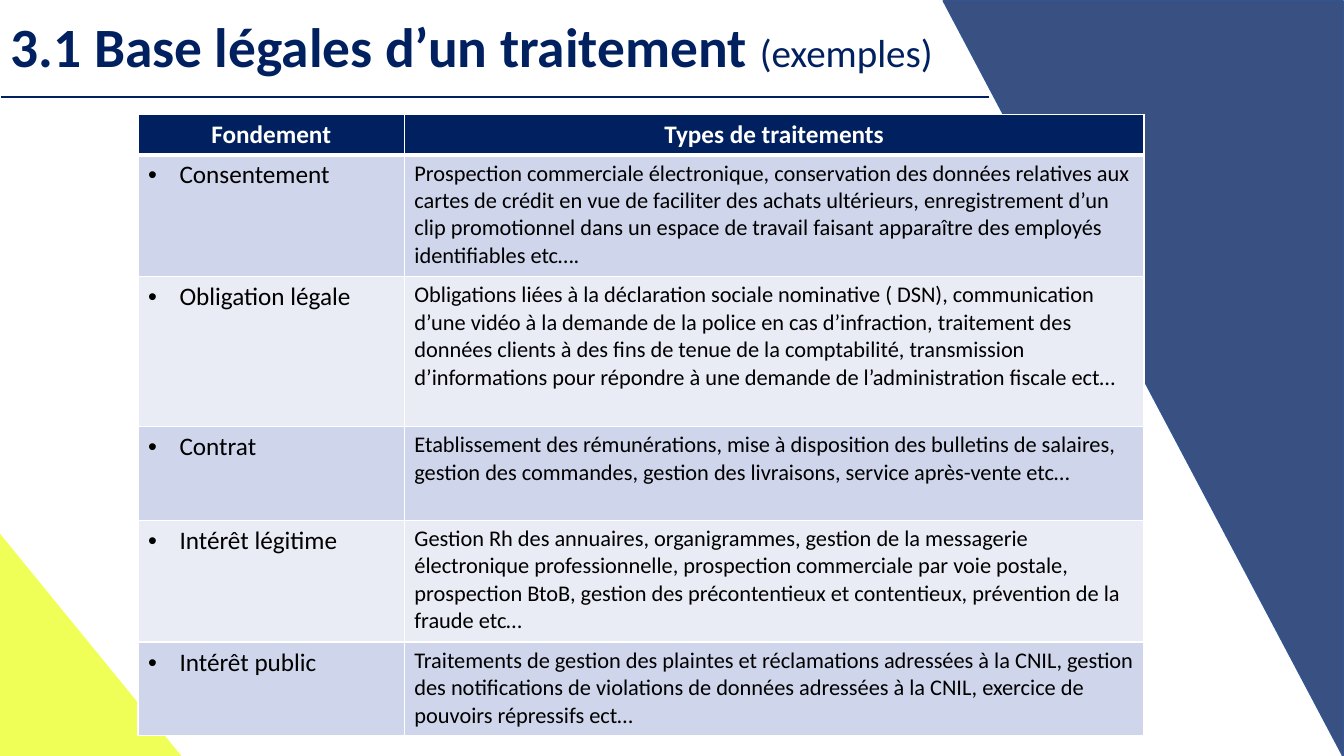
from collections import namedtuple
from dataclasses import dataclass

from lxml import etree
from pptx import Presentation
from pptx.dml.color import RGBColor
from pptx.enum.shapes import MSO_CONNECTOR, MSO_SHAPE
from pptx.enum.text import MSO_ANCHOR, PP_ALIGN
from pptx.oxml.ns import qn
from pptx.util import Cm, Pt

STRAIGHT = MSO_CONNECTOR.STRAIGHT
TRIANGLE = MSO_SHAPE.RIGHT_TRIANGLE
MIDDLE = MSO_ANCHOR.MIDDLE
CENTER = PP_ALIGN.CENTER

Box = namedtuple("Box", "x y w h")


@dataclass(frozen=True)
class Theme:
    font: str = "Calibri"
    navy: str = "002060"
    blue: str = "325491"
    lime: str = "F0FF58"
    white: str = "FFFFFF"
    black: str = "000000"
    band_dark: str = "CFD5EA"
    band_light: str = "E9EBF5"
    title: float = 39.6
    subtitle: float = 27.9
    label: float = 18
    body: float = 16
    rule: float = 1
    header_rule: float = 3


THEME = Theme()
COL_WIDTHS = (6.71, 18.64)
ROW_HEIGHTS = (0.97, 3.07, 3.78, 2.36, 3.07, 2.36)
HEADERS = ("Fondement", "Types de traitements")
BASES = (
    ("Consentement",
     "Prospection commerciale électronique, conservation des données relatives aux "
     "cartes de crédit en vue de faciliter des achats ultérieurs, enregistrement d’un "
     "clip promotionnel dans un espace de travail faisant apparaître des employés "
     "identifiables etc…."),
    ("Obligation légale",
     "Obligations liées à la déclaration sociale nominative ( DSN), communication "
     "d’une vidéo à la demande de la police en cas d’infraction, traitement des "
     "données clients à des fins de tenue de la comptabilité, transmission "
     "d’informations pour répondre à une demande de l’administration fiscale ect…"),
    ("Contrat",
     "Etablissement des rémunérations, mise à disposition des bulletins de salaires, "
     "gestion des commandes, gestion des livraisons, service après-vente etc…"),
    ("Intérêt légitime",
     "Gestion Rh des annuaires, organigrammes, gestion de la messagerie "
     "électronique professionnelle, prospection commerciale par voie postale, "
     "prospection BtoB, gestion des précontentieux et contentieux, prévention de la "
     "fraude etc…"),
    ("Intérêt public",
     "Traitements de gestion des plaintes et réclamations adressées à la CNIL, gestion "
     "des notifications de violations de données adressées à la CNIL, exercice de "
     "pouvoirs répressifs ect…"),
)


def rgb(color):
    return RGBColor.from_string(color)


def style_run(r, size, color, bold=False):
    r.font.name = THEME.font
    r.font.size = Pt(size)
    r.font.bold = bold
    r.font.color.rgb = rgb(color)


def add_title(slide, box):
    sp = slide.shapes.add_textbox(*map(Cm, box))
    tf = sp.text_frame
    tf.word_wrap = True
    tf.vertical_anchor = MIDDLE
    p = tf.paragraphs[0]
    p.line_spacing = 0.9
    for text, size, bold in (
        ("3.1 Base légales d’un traitement ", THEME.title, True),
        ("(exemples)", THEME.subtitle, False),
    ):
        r = p.add_run()
        r.text = text
        style_run(r, size, THEME.navy, bold)


def add_title_rule(slide, box):
    line = slide.shapes.add_connector(
        STRAIGHT, Cm(box.x), Cm(box.y), Cm(box.x + box.w), Cm(box.y + box.h))
    line.line.color.rgb = rgb(THEME.navy)
    line.line.width = Pt(THEME.rule)
    etree.SubElement(line._element.spPr, qn("a:effectLst"))


def add_corner(slide, box, fill, outline, rotation=0, opacity=100):
    sp = slide.shapes.add_shape(TRIANGLE, *map(Cm, box))
    sp.shadow.inherit = False
    sp.rotation = rotation
    sp.fill.solid()
    sp.fill.fore_color.rgb = rgb(fill)
    sp.line.color.rgb = rgb(outline)
    sp.line.width = Pt(THEME.rule)
    if opacity < 100:
        color = sp._element.spPr.find(qn("a:solidFill"))[0]
        etree.SubElement(color, qn("a:alpha"), val=str(opacity * 1000))


def set_borders(cell, widths):
    tcPr = cell._tc.get_or_add_tcPr()
    for side, width in widths.items():
        ln = etree.SubElement(tcPr, qn(f"a:ln{side}"), w=str(Pt(width)))
        fill = etree.SubElement(ln, qn("a:solidFill"))
        etree.SubElement(fill, qn("a:srgbClr"), val=THEME.white)


def set_bullet(p):
    pPr = p._p.get_or_add_pPr()
    indent = Cm(0.79)
    pPr.set("marL", str(indent))
    pPr.set("indent", str(-indent))
    etree.SubElement(pPr, qn("a:buFont"), typeface="Arial")
    etree.SubElement(pPr, qn("a:buChar"), char="•")


def fill_cell(cell, text, row, col):
    header = row == 0
    widths = dict.fromkeys("LRTB", THEME.rule)
    if header:
        widths["B"] = THEME.header_rule
    elif row == 1:
        widths["T"] = THEME.header_rule
    set_borders(cell, widths)
    band = THEME.band_dark if row % 2 else THEME.band_light
    cell.fill.solid()
    cell.fill.fore_color.rgb = rgb(THEME.navy if header else band)
    p = cell.text_frame.paragraphs[0]
    p.text = text
    size = THEME.label if header or col == 0 else THEME.body
    style_run(p.runs[0], size, THEME.white if header else THEME.black, header)
    if header:
        p.alignment = CENTER
    elif col == 0:
        set_bullet(p)


def add_bases_table(slide, box):
    rows = (HEADERS, *BASES)
    table = slide.shapes.add_table(len(rows), len(HEADERS), *map(Cm, box)).table
    for column, width in zip(table.columns, COL_WIDTHS):
        column.width = Cm(width)
    for i, (texts, height) in enumerate(zip(rows, ROW_HEIGHTS)):
        table.rows[i].height = Cm(height)
        for j, text in enumerate(texts):
            fill_cell(table.cell(i, j), text, i, j)


def build_slide(prs):
    slide = prs.slides.add_slide(prs.slide_layouts[6])
    add_title(slide, Box(0.02, 0.71, 29.21, 1.07))
    add_corner(slide, Box(-0.03, 13.44, 4.62, 5.66), THEME.lime, THEME.lime)
    add_corner(slide, Box(23.77, 0.02, 10.08, 19.05), THEME.navy, THEME.blue, 180, 78)
    add_title_rule(slide, Box(0.02, 2.44, 24.9, 0))
    add_bases_table(slide, Box(3.48, 2.88, sum(COL_WIDTHS), sum(ROW_HEIGHTS)))


def main():
    prs = Presentation()
    prs.slide_width = Cm(33.87)
    prs.slide_height = Cm(19.05)
    build_slide(prs)
    prs.save("out.pptx")


if __name__ == "__main__":
    main()
